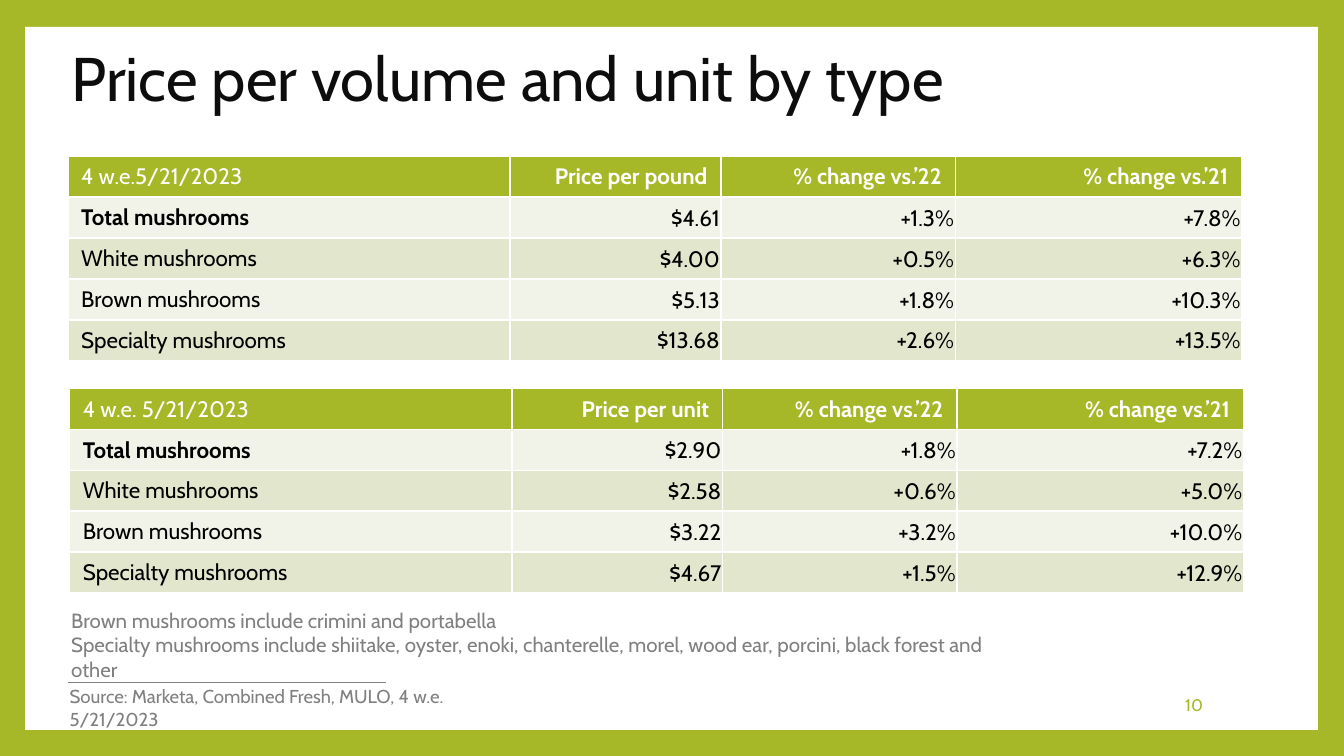
import pptx
import pptx.dml.color
import pptx.enum.shapes
import pptx.enum.text
import pptx.oxml
import pptx.oxml.ns
import pptx.util

Pt = pptx.util.Pt
ALIGN = pptx.enum.text.PP_ALIGN
ANCHOR = pptx.enum.text.MSO_ANCHOR

FONT = "Cabin"
GREEN, WHITE, BLACK, GREY, TITLE = "A6B727", "FFFFFF", "000000", "808080", "0D0D0D"
BANDS = ["F1F3E8", "E1E6CD"]
COLUMN_WIDTHS = [237, 113, 125.5, 153.5]
NUMBER_MARGINS = {"margin_left": Pt(0.7), "margin_top": Pt(0.7),
                  "margin_right": Pt(0.7), "margin_bottom": Pt(0)}

POUND_ROWS = [
    ["4 w.e.5/21/2023", "Price per pound", "% change vs.’22", "% change vs.’21"],
    ["Total mushrooms", "$4.61", "+1.3%", "+7.8%"],
    ["White mushrooms", "$4.00", "+0.5%", "+6.3%"],
    ["Brown mushrooms", "$5.13", "+1.8%", "+10.3%"],
    ["Specialty mushrooms", "$13.68", "+2.6%", "+13.5%"],
]
UNIT_ROWS = [
    ["4 w.e. 5/21/2023", "Price per unit", "% change vs.’22", "% change vs.’21"],
    ["Total mushrooms", "$2.90", "+1.8%", "+7.2%"],
    ["White mushrooms", "$2.58", "+0.6%", "+5.0%"],
    ["Brown mushrooms", "$3.22", "+3.2%", "+10.0%"],
    ["Specialty mushrooms", "$4.67", "+1.5%", "+12.9%"],
]
NOTES = [
    "Brown mushrooms include crimini and portabella",
    "Specialty mushrooms include shiitake, oyster, enoki, chanterelle, morel, "
    "wood ear, porcini, black forest and other",
]
SOURCE = ["Source: Marketa, Combined Fresh, MULO, 4 w.e. 5/21/2023"]


def rgb(color):
    return pptx.dml.color.RGBColor.from_string(color)


def set_values(target, values):
    for name, value in values.items():
        setattr(target, name, value)


def fill_solid(fill, color):
    fill.solid()
    fill.fore_color.rgb = rgb(color)


def write_text(frame, lines, size, color, bold=False, align=ALIGN.LEFT, spacing=1.0):
    frame.text = "\n".join(lines)
    for paragraph in frame.paragraphs:
        set_values(paragraph, {"alignment": align, "line_spacing": spacing,
                               "space_before": Pt(0), "space_after": Pt(0)})
        for run in paragraph.runs:
            set_values(run.font, {"name": FONT, "size": Pt(size), "bold": bold})
            run.font.color.rgb = rgb(color)


def add_text(slide, box, lines, size, color, align=ALIGN.LEFT, anchor=ANCHOR.TOP):
    frame = slide.shapes.add_textbox(*map(Pt, box)).text_frame
    set_values(frame, {"word_wrap": True, "vertical_anchor": anchor})
    write_text(frame, lines, size, color, align=align)


def add_title(slide, box, text):
    title = slide.shapes.title
    set_values(title, dict(zip(("left", "top", "width", "height"), map(Pt, box))))
    set_values(title.text_frame, {"word_wrap": True, "vertical_anchor": ANCHOR.MIDDLE,
                                  "auto_size": pptx.enum.text.MSO_AUTO_SIZE.NONE})
    write_text(title.text_frame, [text], 33, TITLE, spacing=0.9)


def add_panel(slide, box):
    """Place the white area behind the title, leaving a green frame."""
    panel = slide.shapes.add_shape(pptx.enum.shapes.MSO_SHAPE.RECTANGLE, *map(Pt, box))
    panel.shadow.inherit = False
    fill_solid(panel.fill, WHITE)
    panel.line.fill.background()
    slide.shapes.title.element.addprevious(panel.element)


def add_borders(cell):
    properties = cell._tc.get_or_add_tcPr()
    for position, side in enumerate(("lnL", "lnR", "lnT", "lnB")):
        properties.insert(position, pptx.oxml.parse_xml(
            f'<a:{side} {pptx.oxml.ns.nsdecls("a")} w="{Pt(1)}"><a:solidFill>'
            f'<a:srgbClr val="{WHITE}"/></a:solidFill></a:{side}>'))


def add_price_table(slide, box, rows):
    table = slide.shapes.add_table(len(rows), len(COLUMN_WIDTHS), *map(Pt, box)).table
    table.horz_banding = False
    for column, width in zip(table.columns, COLUMN_WIDTHS):
        column.width = Pt(width)
    for row_index, row in enumerate(rows):
        header = row_index == 0
        table.rows[row_index].height = Pt(box[3] / len(rows))
        for column_index, text in enumerate(row):
            cell = table.cell(row_index, column_index)
            label = column_index == 0
            bold = header != label if row_index < 2 else False
            if row_index == 1:
                bold = label
            fill_solid(cell.fill, GREEN if header else BANDS[(row_index - 1) % 2])
            add_borders(cell)
            cell.vertical_anchor = ANCHOR.TOP if header else ANCHOR.MIDDLE
            if not header and not label:
                set_values(cell, NUMBER_MARGINS)
            write_text(cell.text_frame, [text], 12, WHITE if header else BLACK, bold,
                       ALIGN.LEFT if label else ALIGN.RIGHT)


def add_footer(slide, box):
    """Place the rule, the source and the page number."""
    left, top, width, height = box
    rule = slide.shapes.add_connector(
        pptx.enum.shapes.MSO_CONNECTOR.STRAIGHT,
        Pt(left + 6.5), Pt(top + 2), Pt(left + 176.5), Pt(top + 2))
    rule.line.width = Pt(0.79)
    rule.line.color.rgb = rgb(GREY)
    rule.element.spPr.append(
        pptx.oxml.parse_xml(f'<a:effectLst {pptx.oxml.ns.nsdecls("a")}/>'))
    add_text(slide, (left, top, 258, height), SOURCE, 10, GREY)
    add_text(slide, (left + width - 101, top + 3.5, 101, 21.5), ["10"], 9, GREEN,
             ALIGN.RIGHT, ANCHOR.MIDDLE)


def main():
    presentation = pptx.Presentation()
    set_values(presentation, {"slide_width": Pt(720), "slide_height": Pt(405)})
    slide = presentation.slides.add_slide(presentation.slide_layouts[5])
    fill_solid(slide.background.fill, GREEN)
    add_panel(slide, (13.5, 14.4, 692.6, 376.6))
    add_title(slide, (31, 15, 614, 57), "Price per volume and unit by type")
    add_price_table(slide, (36.3, 83.8, 629, 108), POUND_ROWS)
    add_price_table(slide, (37.2, 208.2, 629, 108), UNIT_ROWS)
    add_text(slide, (31, 322, 530, 34), NOTES, 11, GREY)
    add_footer(slide, (30.2, 363.6, 621.4, 20))
    presentation.save("out.pptx")


if __name__ == "__main__":
    main()
